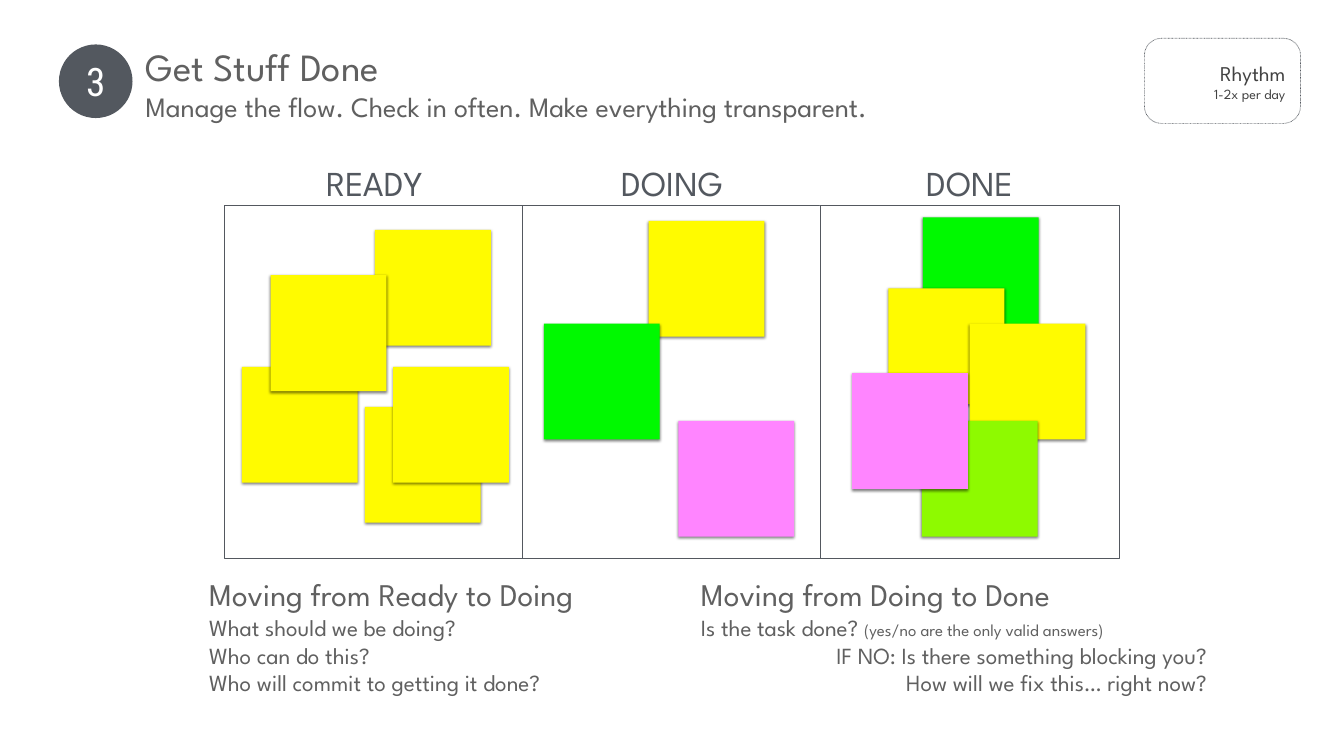
from lxml.etree import SubElement
from pptx import Presentation
from pptx.dml.color import RGBColor
from pptx.enum.dml import MSO_LINE
from pptx.enum.shapes import MSO_SHAPE
from pptx.enum.text import MSO_ANCHOR, MSO_AUTO_SIZE, PP_ALIGN
from pptx.oxml.ns import qn
from pptx.util import Cm, Pt

SLATE, GREY, DARK, WHITE = "53585F", "606060", "424242", "FFFFFF"
YELLOW, GREEN, LIME, PINK = "FFFB00", "00F900", "8EFA00", "FF85FF"
SPARTAN, ROBOTO = "League Spartan", "Roboto Condensed"
LEFT, CENTER, RIGHT = PP_ALIGN.LEFT, PP_ALIGN.CENTER, PP_ALIGN.RIGHT
TOP, MIDDLE = MSO_ANCHOR.TOP, MSO_ANCHOR.MIDDLE

COLUMNS = ["READY", "DOING", "DONE"]
BOARD = {"left": 11.33, "top": 10.34, "pitch": 15, "width": 15.09, "height": 17.78}
HEADING = {"top": 6.53, "height": 5.36}
NOTE_SIZE = 5.84
NOTES = [
    (12.19, 18.49, YELLOW), (18.9, 11.58, YELLOW), (13.64, 13.87, YELLOW),
    (18.39, 20.5, YELLOW), (19.81, 18.49, YELLOW),
    (32.69, 11.13, YELLOW), (34.19, 21.21, PINK), (27.41, 16.31, GREEN),
    (46.51, 10.95, GREEN), (44.78, 14.53, YELLOW), (48.87, 16.31, YELLOW),
    (46.46, 21.21, LIME), (42.95, 18.8, PINK),
]
TITLE = [
    (LEFT, [("Get Stuff Done", 55)]),
    (LEFT, [("Manage the flow. Check in often. Make everything transparent.", 40)]),
]
RHYTHM = [(RIGHT, [("Rhythm", 30)]), (RIGHT, [("1-2x per day", 20)])]
TO_DOING = [
    (LEFT, [("Moving from Ready to Doing", 45)]),
    (LEFT, [("What should we be doing?", 33)]),
    (LEFT, [("Who can do this?", 33)]),
    (LEFT, [("Who will commit to getting it done?", 33)]),
]
TO_DONE = [
    (LEFT, [("Moving from Doing to Done", 45)]),
    (LEFT, [("Is the task done? ", 33), ("(yes/no are the only valid answers)", 24)]),
    (RIGHT, [("IF NO: Is there something blocking you?", 33)]),
    (RIGHT, [("How will we fix this… right now?", 33)]),
]


def rgb(value):
    return RGBColor.from_string(value)


def place(box):
    return [Cm(v) for v in box]


def write(shape, paragraphs, color, font=SPARTAN, anchor=MIDDLE):
    tf = shape.text_frame
    frame = {"word_wrap": True, "auto_size": MSO_AUTO_SIZE.NONE, "vertical_anchor": anchor}
    frame.update({f"margin_{side}": Cm(0.2) for side in ("left", "right", "top", "bottom")})
    for name, value in frame.items():
        setattr(tf, name, value)
    for i, (align, runs) in enumerate(paragraphs):
        p = tf.add_paragraph() if i else tf.paragraphs[0]
        p.alignment, p.line_spacing = align, 1.0
        for text, size in runs:
            r = p.add_run()
            r.text = text
            for name, value in {"name": font, "size": Pt(size)}.items():
                setattr(r.font, name, value)
            r.font.color.rgb = rgb(color)


def add_text(s, box, paragraphs, color, **options):
    write(s.shapes.add_textbox(*place(box)), paragraphs, color, **options)


def add_shape(s, kind, box, fill=None, line=None):
    sp = s.shapes.add_shape(kind, *place(box))
    sp.shadow.inherit = False
    if fill:
        sp.fill.solid()
        sp.fill.fore_color.rgb = rgb(fill)
    else:
        sp.fill.background()
    if line:
        sp.line.color.rgb = rgb(line)
        sp.line.width = Pt(1)
    else:
        sp.line.fill.background()
    return sp


def add_note(s, left, top, color):
    sp = add_shape(s, MSO_SHAPE.RECTANGLE, (left, top, NOTE_SIZE, NOTE_SIZE), color)
    effects = sp.element.spPr.find(qn("a:effectLst"))
    shadow = SubElement(effects, qn("a:outerShdw"), blurRad=str(Pt(4)), dist=str(Pt(2)),
                        dir="5400000", rotWithShape="0")
    black = SubElement(shadow, qn("a:srgbClr"), val="000000")
    SubElement(black, qn("a:alpha"), val="50000")


def main():
    """Build the task board slide and save it."""
    prs = Presentation()
    prs.slide_width, prs.slide_height = Cm(67.74), Cm(38.1)
    s = prs.slides.add_slide(prs.slide_layouts[5])

    title = s.shapes.title
    title.left, title.top, title.width, title.height = place((7.14, 1.85, 39.29, 4.65))
    write(title, TITLE, GREY)
    badge = add_shape(s, MSO_SHAPE.OVAL, (2.97, 2.24, 3.71, 3.71), SLATE)
    write(badge, [(CENTER, [("3", 56)])], WHITE, font=ROBOTO)

    for i, name in enumerate(COLUMNS):
        left = BOARD["left"] + i * BOARD["pitch"]
        add_shape(s, MSO_SHAPE.RECTANGLE,
                  (left, BOARD["top"], BOARD["width"], BOARD["height"]), WHITE, SLATE)
        add_text(s, (left, HEADING["top"], BOARD["width"], HEADING["height"]),
                 [(CENTER, [(name, 50)])], SLATE)
    for note in NOTES:
        add_note(s, *note)

    add_text(s, (10.34, 28.8, 21.46, 6.88), TO_DOING, GREY, anchor=TOP)
    add_text(s, (35.13, 28.8, 25.91, 6.88), TO_DONE, GREY, anchor=TOP)

    add_text(s, (59.61, 2.46, 5.38, 3.25), RHYTHM, DARK)
    frame = add_shape(s, MSO_SHAPE.ROUNDED_RECTANGLE, (57.68, 1.93, 7.87, 4.29), line=SLATE)
    frame.adjustments[0] = 0.2
    frame.line.dash_style = MSO_LINE.ROUND_DOT

    prs.save("out.pptx")


if __name__ == "__main__":
    main()
